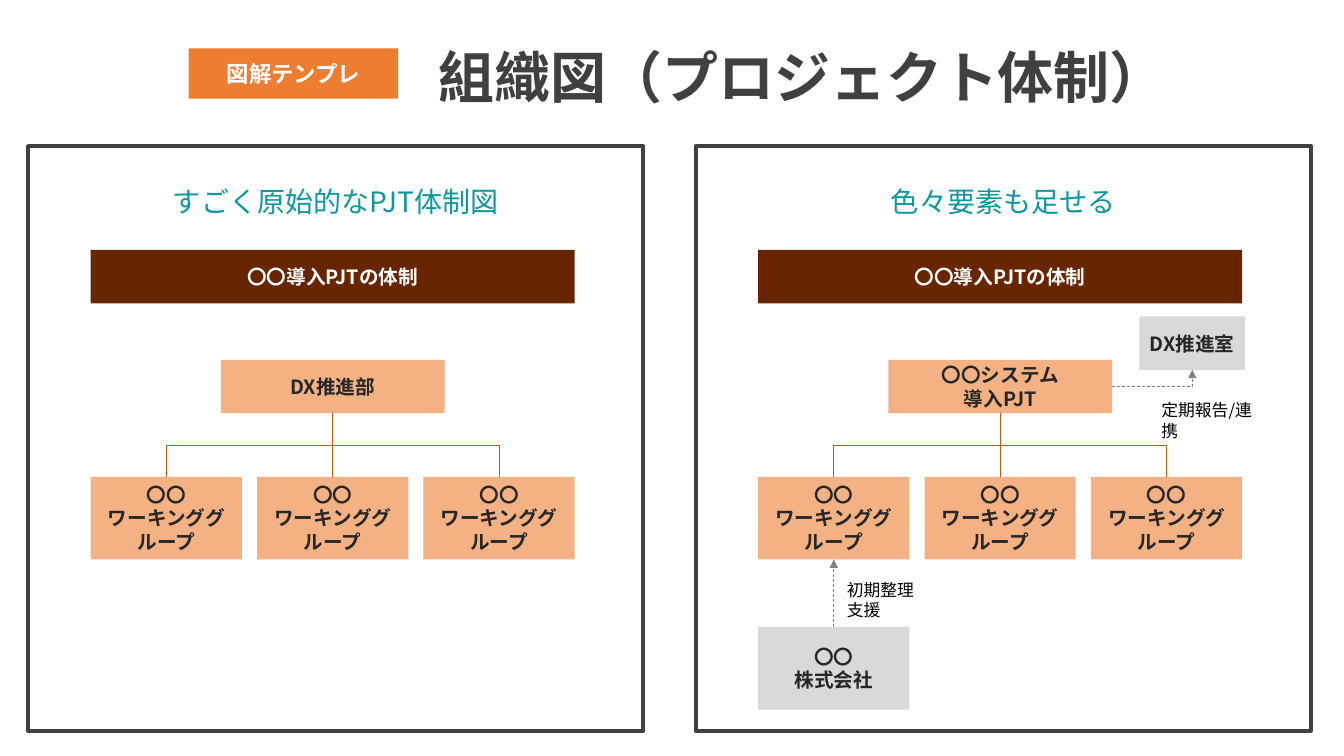
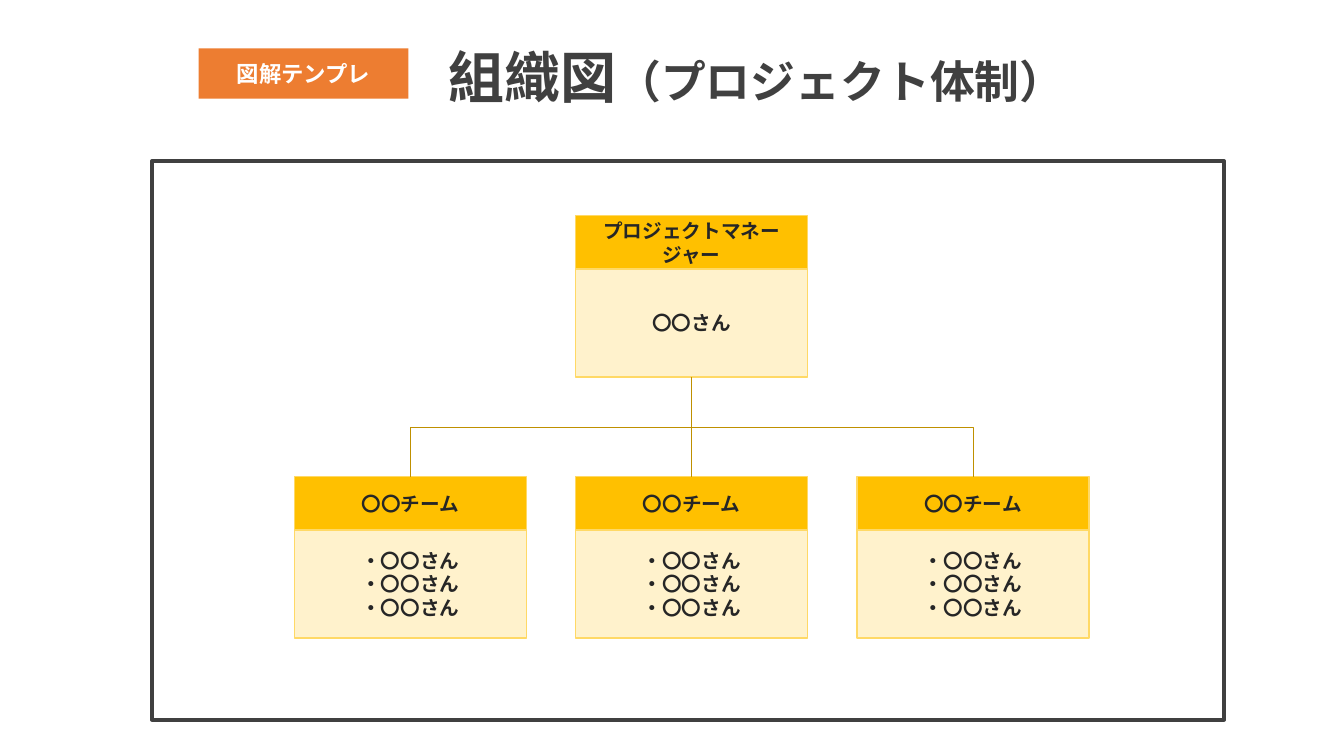
from lxml import etree
from pptx import Presentation
from pptx.dml.color import RGBColor
from pptx.enum.dml import MSO_LINE
from pptx.enum.shapes import MSO_CONNECTOR, MSO_SHAPE
from pptx.enum.text import MSO_ANCHOR, PP_ALIGN
from pptx.oxml.ns import qn
from pptx.util import Inches, Pt

RECTANGLE = MSO_SHAPE.RECTANGLE
STRAIGHT, ELBOW = MSO_CONNECTOR.STRAIGHT, MSO_CONNECTOR.ELBOW
DASH = MSO_LINE.DASH
TOP, MIDDLE = MSO_ANCHOR.TOP, MSO_ANCHOR.MIDDLE
LEFT, CENTER = PP_ALIGN.LEFT, PP_ALIGN.CENTER
SITE_TOP, SITE_BOTTOM, SITE_RIGHT = 0, 2, 3  # connection sites of a rectangle
FONT = "Noto Sans CJK JP"
color = RGBColor.from_string

# Shared styles
BASE = dict(fill=None, line=None, textbox=False, wrap=True, anchor=MIDDLE, align=CENTER,
            inset=(0, 0), size=14, bold=True, color="262626", paragraph={})
FRAME = BASE | dict(line=("404040", 3))
TITLE = BASE | dict(textbox=True, wrap=False, anchor=TOP, align=LEFT, inset=(0.1, 0.1),
                    size=40, color="404040")
TAG = BASE | dict(fill="ED7D31", inset=(0.1, 0.1), size=16, color="FFFFFF")
HEADING = BASE | dict(textbox=True, inset=(0.16, 0.1), size=20, bold=False, color="0E979D",
                      paragraph=dict(line_spacing=0.9, space_before=Pt(10)))
BANNER = BASE | dict(fill="682501", color="FFFFFF")
UNIT = BASE | dict(fill="F4B183")
OUTSIDER = BASE | dict(fill="D9D9D9")
NOTE = TITLE | dict(size=12, bold=False, color="000000")
ROLE = BASE | dict(fill="FFC000", line=("FFD966", 1))
MEMBERS = ROLE | dict(fill="FFF2CC")


def add_box(slide, bounds, style, runs=()):
    """Add a box; runs are (text, size) pairs, a pair of None starts a paragraph."""
    position = [Inches(value) for value in bounds]
    if style["textbox"]:
        shape = slide.shapes.add_textbox(*position)
    else:
        shape = slide.shapes.add_shape(RECTANGLE, *position)
        shape.shadow.inherit = False
        if style["fill"]:
            shape.fill.solid()
            shape.fill.fore_color.rgb = color(style["fill"])
        else:
            shape.fill.background()
        if style["line"]:
            shape.line.color.rgb = color(style["line"][0])
            shape.line.width = Pt(style["line"][1])
        else:
            shape.line.fill.background()
    frame = shape.text_frame
    left, right = style["inset"]
    for name, value in dict(word_wrap=style["wrap"], vertical_anchor=style["anchor"],
                            margin_left=Inches(left), margin_right=Inches(right),
                            margin_top=Inches(0.05), margin_bottom=Inches(0.05)).items():
        setattr(frame, name, value)
    if isinstance(runs, str):
        runs = [pair for text in runs.split("\n") for pair in (None, (text, style["size"]))][1:]
    paragraph = frame.paragraphs[0]
    for pair in runs:
        if pair is None:
            paragraph = frame.add_paragraph()
            continue
        for name, value in (dict(alignment=style["align"]) | style["paragraph"]).items():
            setattr(paragraph, name, value)
        run = paragraph.add_run()
        run.text = pair[0]
        run.font.color.rgb = color(style["color"])
        for name, value in dict(name=FONT, size=Pt(pair[1]), bold=style["bold"]).items():
            setattr(run.font, name, value)
        etree.SubElement(run.font._element, qn("a:ea"), typeface=FONT)
    return shape


def add_link(slide, start, start_site, end, end_site, line_color, arrow=False):
    """Join two boxes: straight when aligned, else with bends."""
    centers = [shape.left + shape.width // 2 for shape in (start, end)]
    straight = abs(centers[0] - centers[1]) < Inches(0.03)
    link = slide.shapes.add_connector(STRAIGHT if straight else ELBOW, 0, 0, 0, 0)
    link.begin_connect(start, start_site)
    link.end_connect(end, end_site)
    properties = link._element.spPr
    if not straight and start_site == SITE_RIGHT:
        properties.find(qn("a:prstGeom")).set("prst", "bentConnector2")
    elif not straight:
        # Turn the connector so that it leaves downwards
        across, down = link.width, link.height
        rightward = link.end_x > link.begin_x
        middle_x, middle_y = link.left + across // 2, link.top + down // 2
        link.left, link.top = middle_x - down // 2, middle_y - across // 2
        link.width, link.height = down, across
        transform = properties.find(qn("a:xfrm"))
        transform.set("rot", "16200000" if rightward else "5400000")
        transform.set("flipH", "1" if rightward else "0")
    link.line.color.rgb = color(line_color)
    link.line.width = Pt(0.5)
    if arrow:
        link.line.dash_style = DASH
        etree.SubElement(properties.find(qn("a:ln")), qn("a:tailEnd"), type="triangle")
    etree.SubElement(properties, qn("a:effectLst"))


presentation = Presentation()
presentation.slide_width, presentation.slide_height = Inches(13.33), Inches(7.5)

# Title and tag on each slide
slides = []
for tag_left, title_width, detail_size in [(1.87, 7.49, 40), (1.97, 6.37, 32)]:
    slide = presentation.slides.add_slide(presentation.slide_layouts[6])
    add_box(slide, (tag_left + 2.38, 0.37, title_width, 0.77), TITLE,
            [("組織図", 40), ("（プロジェクト体制）", detail_size)])
    add_box(slide, (tag_left, 0.48, 2.08, 0.5), TAG, "図解テンプレ")
    slides.append(slide)
panel_slide, team_slide = slides

# Slide 1: two panels with the same project structure
panels = [(0.28, "すごく原始的なPJT体制図", "DX推進部"),
          (6.9, "色々要素も足せる", "〇〇システム\n導入PJT")]
for panel_left, heading, lead_name in panels:
    chart_left = panel_left + 0.62
    add_box(panel_slide, (panel_left, 1.45, 6.1, 5.8), FRAME)
    add_box(panel_slide, (chart_left, 1.72, 4.8, 0.59), HEADING, heading)
    add_box(panel_slide, (chart_left, 2.48, 4.8, 0.53), BANNER, "〇〇導入PJTの体制")
    lead = add_box(panel_slide, (chart_left + 1.29, 3.57, 2.22, 0.53), UNIT, lead_name)
    groups = []
    for column in range(3):
        group = add_box(panel_slide, (chart_left + 1.65 * column, 4.73, 1.5, 0.82), UNIT,
                        "〇〇\nワーキンググループ")
        add_link(panel_slide, lead, SITE_BOTTOM, group, SITE_TOP, "C55A11")
        groups.append(group)

# Extra parties around the right-hand structure
company = add_box(panel_slide, (chart_left, 6.22, 1.5, 0.82), OUTSIDER, "〇〇\n株式会社")
office = add_box(panel_slide, (11.3, 3.14, 1.05, 0.53), OUTSIDER, "DX推進室")
add_link(panel_slide, company, SITE_TOP, groups[0], SITE_BOTTOM, "808080", arrow=True)
add_link(panel_slide, lead, SITE_RIGHT, office, SITE_BOTTOM, "808080", arrow=True)
add_box(panel_slide, (8.3, 5.7, 0.88, 0.5), NOTE, "初期整理\n支援")
add_box(panel_slide, (11.42, 3.92, 1.2, 0.5), NOTE | dict(wrap=True), "定期報告/連携")

# Slide 2: a manager above three teams
add_box(team_slide, (1.51, 1.6, 10.63, 5.54), FRAME)
cards = [(5.71, 2.14, "プロジェクトマネージャー", "〇〇さん")]
cards += [(2.92 + 2.79 * column, 4.73, "〇〇チーム", "\n".join(["・〇〇さん"] * 3))
          for column in range(3)]
manager = None
for left, top, role, members in cards:
    body = add_box(team_slide, (left, top + 0.53, 2.3, 1.07), MEMBERS, members)
    header = add_box(team_slide, (left, top, 2.3, 0.53), ROLE, role)
    if manager:
        add_link(team_slide, manager, SITE_BOTTOM, header, SITE_TOP, "BF9000")
    else:
        manager = body

presentation.save("out.pptx")
